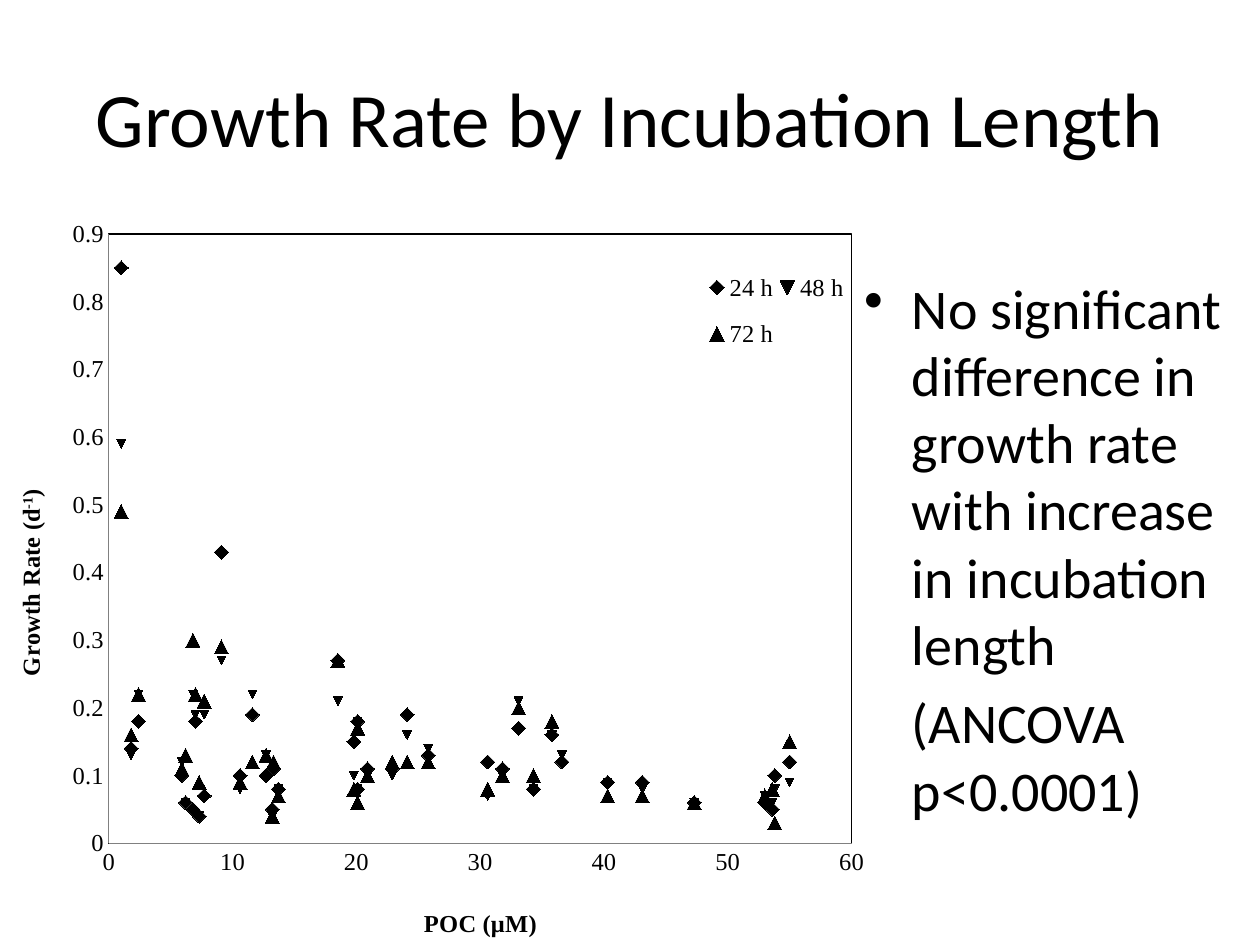
from lxml import etree
from pptx import Presentation
from pptx.chart.data import XyChartData
from pptx.dml.color import RGBColor
from pptx.enum.chart import XL_CHART_TYPE, XL_LEGEND_POSITION, XL_MARKER_STYLE, XL_TICK_MARK
from pptx.enum.text import MSO_ANCHOR, PP_ALIGN
from pptx.oxml import parse_xml
from pptx.oxml.ns import nsdecls, qn
from pptx.util import Inches, Pt

SCATTER = XL_CHART_TYPE.XY_SCATTER
CORNER = XL_LEGEND_POSITION.CORNER
DIAMOND = XL_MARKER_STYLE.DIAMOND
AUTOMATIC = XL_MARKER_STYLE.AUTOMATIC
TRIANGLE = XL_MARKER_STYLE.TRIANGLE
NO_TICK = XL_TICK_MARK.NONE
BLACK = RGBColor(0, 0, 0)
GRAY = RGBColor(0x80, 0x80, 0x80)
SERIF = "Times New Roman"
SANS = "Calibri"

POC = [1, 18.5, 20.1, 6.8, 40.3, 11.6, 12.7, 31.8, 20.9, 25.8, 47.3, 53.8, 30.6,
       24.1, 43.1, 9.1, 19.8, 20.1, 7.3, 6.2, 10.6, 2.4, 1.8, 7, 5.9, 7.7, 13.7,
       13.2, 34.3, 13.3, 33.1, 35.8, 55, 53, 53.6, 22.9, 36.6]
GROWTH = [
    ("24 h", DIAMOND, 8,
     [0.85, 0.27, 0.18, 0.05, 0.09, 0.19, 0.1, 0.11, 0.11, 0.13, 0.06, 0.1, 0.12,
      0.19, 0.09, 0.43, 0.15, 0.08, 0.04, 0.06, 0.1, 0.18, 0.14, 0.18, 0.1, 0.07,
      0.08, 0.05, 0.08, 0.11, 0.17, 0.16, 0.12, 0.06, 0.05, 0.11, 0.12]),
    ("48 h", AUTOMATIC, 5,
     [0.59, 0.21, 0.18, 0.22, 0.09, 0.22, 0.13, 0.1, 0.1, 0.14, 0.06, 0.08, 0.07,
      0.16, 0.08, 0.27, 0.1, 0.08, 0.04, 0.06, 0.08, 0.22, 0.13, 0.19, 0.12, 0.19,
      0.08, 0.04, 0.08, 0.11, 0.21, 0.16, 0.09, 0.07, 0.06, 0.1, 0.13]),
    ("72 h", TRIANGLE, 8,
     [0.49, 0.27, 0.17, 0.3, 0.07, 0.12, 0.13, 0.1, 0.1, 0.12, 0.06, 0.03, 0.08,
      0.12, 0.07, 0.29, 0.08, 0.06, 0.09, 0.13, 0.09, 0.22, 0.16, 0.22, 0.11, 0.21,
      0.07, 0.04, 0.1, 0.12, 0.2, 0.18, 0.15, 0.07, 0.08, 0.12]),
]


def style(font, name, size, bold=False):
    font.name, font.size, font.bold = name, Pt(size), bold
    font.color.rgb = BLACK


def place(element, before, inner=False, **shares):
    for old in element.findall(qn("c:layout")):
        element.remove(old)
    layout = parse_xml(f"<c:layout {nsdecls('c')}><c:manualLayout/></c:layout>")
    settings = {"layoutTarget": "inner"} if inner else {}
    settings.update({f"{side}Mode": "edge" for side in "xy"})
    settings.update(shares)
    for tag, value in settings.items():
        etree.SubElement(layout[0], qn(f"c:{tag}")).set("val", str(value))
    if before is None:
        element.insert(0, layout)
    else:
        element.find(qn(before)).addnext(layout)


prs = Presentation()
prs.slide_width, prs.slide_height = Inches(10), Inches(7.5)
W, H = prs.slide_width, prs.slide_height
slide = prs.slides.add_slide(prs.slide_layouts[5])

title = slide.shapes.title
title.left, title.top = int(W * 0.05), int(H * 0.04)
title.width, title.height = int(W * 0.9), Inches(1.25)
title.text_frame.text = "Growth Rate by Incubation Length"
title.text_frame.vertical_anchor = MSO_ANCHOR.MIDDLE
heading = title.text_frame.paragraphs[0]
heading.alignment = PP_ALIGN.CENTER
style(heading.font, SANS, 44)

finding = slide.shapes.add_textbox(Inches(6.76), Inches(2.12), Inches(3.07), Inches(4.11))
finding_text = finding.text_frame
finding_text.word_wrap = True
finding_text.text = ("No significant difference in growth rate with increase in incubation length"
                     "\n(ANCOVA p<0.0001)")
for paragraph, hanging in zip(finding_text.paragraphs, (True, False)):
    style(paragraph.font, SANS, 32)
    paragraph.space_before = Pt(6.4)
    properties = paragraph._p.get_or_add_pPr()
    properties.set("marL", str(Inches(0.38)))
    properties.set("indent", str(Inches(-0.38) if hanging else 0))
    if hanging:
        bullet = parse_xml(f'<a:buChar {nsdecls("a")} char="•"/>')
        properties.find(qn("a:spcBef")).addnext(bullet)

growth_data = XyChartData()
for name, marker, size, rates in GROWTH:
    points = growth_data.add_series(name)
    for poc, rate in zip(POC, rates):
        points.add_data_point(poc, rate)

chart = slide.shapes.add_chart(SCATTER, 0, Inches(1.55), int(W * 0.9), H - Inches(1.55),
                               growth_data).chart
chart.has_title = False
style(chart.font, SERIF, 14)
chart.plots[0].vary_by_categories = False
for series, (name, marker, size, rates) in zip(chart.plots[0].series, GROWTH):
    series.smooth = False
    series.format.line.fill.background()
    series.marker.style, series.marker.size = marker, size
    series.marker.format.fill.solid()
    series.marker.format.fill.fore_color.rgb = BLACK
    series.marker.format.line.color.rgb = BLACK

AXES = [
    (chart.category_axis, 60, 10, [("POC (μM)", 0)], {"x": 0.37, "y": 0.95}),
    (chart.value_axis, 0.9, 0.1, [("Growth Rate (d", 0), ("-1", 30000), (")", 0)],
     {"x": 0.01, "y": 0.39}),
]
for axis, maximum, step, label, corner in AXES:
    axis.minimum_scale, axis.maximum_scale, axis.major_unit = 0, maximum, step
    axis.has_major_gridlines = False
    axis.major_tick_mark = axis.minor_tick_mark = NO_TICK
    axis.tick_labels.number_format = "General"
    axis.tick_labels.number_format_is_linked = False
    style(axis.tick_labels.font, SERIF, 14)
    axis.format.line.color.rgb = GRAY
    axis_label = axis.axis_title.text_frame.paragraphs[0]
    style(axis_label.font, SERIF, 14, True)
    for text, baseline in label:
        run = axis_label.add_run()
        run.text = text
        style(run.font, SERIF, 14, True)
        if baseline:
            run.font._element.set("baseline", str(baseline))
    place(axis.axis_title._element, "c:tx", **corner)

chart.has_legend = True
chart.legend.position = CORNER
chart.legend.include_in_layout = False
style(chart.legend.font, SERIF, 14)
place(chart.legend._element, "c:legendPos", x=0.62, y=0.08, w=0.13, h=0.15)

plot_area = chart._chartSpace.chart.plotArea
place(plot_area, None, True, x=0.096, y=0.052, w=0.655, h=0.818)
plot_area.append(parse_xml(
    f'<c:spPr {nsdecls("c", "a")}><a:noFill/><a:ln w="9525"><a:solidFill>'
    f'<a:srgbClr val="{BLACK}"/></a:solidFill></a:ln></c:spPr>'))

prs.save("out.pptx")
